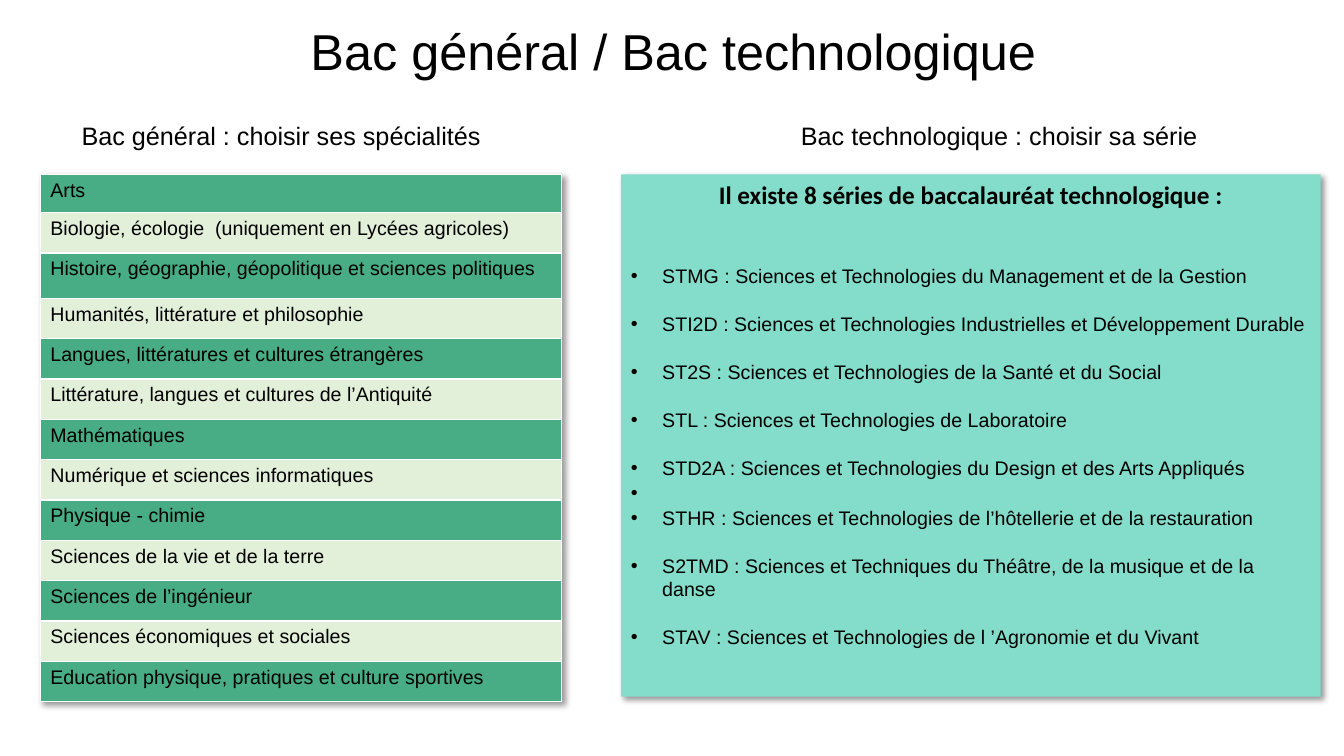
from dataclasses import dataclass

from lxml.etree import SubElement
from pptx import Presentation
from pptx.dml.color import RGBColor as RGB
from pptx.enum.shapes import MSO_SHAPE as SHAPE
from pptx.enum.text import MSO_ANCHOR as ANCHOR, PP_ALIGN as ALIGN
from pptx.oxml.ns import qn
from pptx.util import Inches, Pt


@dataclass(frozen=True)
class Theme:
    text: str = "000000"
    line: str = "FFFFFF"
    band_dark: str = "48AC84"
    band_light: str = "E2F0D9"
    panel: str = "83DDCA"
    font: str = "Arial"
    panel_font: str = "Calibri"
    title: int = 36
    heading: int = 18
    body: int = 14


T = Theme()
W, H = Inches(13.33), Inches(7.5)

SPECIALITES = [
    "Arts",
    "Biologie, écologie  (uniquement en Lycées agricoles)",
    "Histoire, géographie, géopolitique et sciences politiques",
    "Humanités, littérature et philosophie",
    "Langues, littératures et cultures étrangères",
    "Littérature, langues et cultures de l’Antiquité",
    "Mathématiques",
    "Numérique et sciences informatiques",
    "Physique - chimie",
    "Sciences de la vie et de la terre",
    "Sciences de l’ingénieur",
    "Sciences économiques et sociales",
    "Education physique, pratiques et culture sportives",
]
ROW_HEIGHT = 0.4
SPECIAL_ROWS = {0: 0.38, 2: 0.45}

# Text of each bullet and the space before it in points
FIRST, GAP, TIGHT = 39, 17.5, 0.8
SERIES = [
    ("STMG : Sciences et Technologies du Management et de la Gestion", FIRST),
    ("STI2D : Sciences et Technologies Industrielles et Développement Durable", GAP),
    ("ST2S : Sciences et Technologies de la Santé et du Social", GAP),
    ("STL : Sciences et Technologies de Laboratoire", GAP),
    ("STD2A : Sciences et Technologies du Design et des Arts Appliqués", GAP),
    (" ", TIGHT),  # this bullet shows without a label
    ("STHR : Sciences et Technologies de l’hôtellerie et de la restauration", TIGHT),
    ("S2TMD : Sciences et Techniques du Théâtre, de la musique et de la danse", GAP),
    ("STAV : Sciences et Technologies de l ’Agronomie et du Vivant", GAP),
]


def area(left, top, width, height):
    """Turn percentages of the slide into lengths."""
    return [round(size * share / 100) for size, share in
            ((W, left), (H, top), (W, width), (H, height))]


def write(p, text, size, font=T.font, bold=False, align=ALIGN.LEFT):
    p.text = text
    p.alignment = align
    f = p.runs[0].font
    f.name, f.size, f.bold = font, Pt(size), bold
    f.color.rgb = RGB.from_string(T.text)


def add_bullet(p):
    indent = Inches(0.31)
    pPr = p._p.get_or_add_pPr()
    pPr.set("marL", str(indent))
    pPr.set("indent", str(-indent))
    SubElement(pPr, qn("a:buFont"), typeface=T.font)
    SubElement(pPr, qn("a:buChar"), char="•")


def add_shadow(parent):
    effects = SubElement(parent, qn("a:effectLst"))
    shadow = SubElement(effects, qn("a:outerShdw"), blurRad=str(Pt(4)),
                        dist=str(Pt(3)), dir=str(45 * 60000), algn="tl")
    color = SubElement(shadow, qn("a:srgbClr"), val=T.text)
    SubElement(color, qn("a:alpha"), val="40000")


def add_borders(cell):
    tcPr = cell._tc.get_or_add_tcPr()
    for i, side in enumerate(("a:lnL", "a:lnR", "a:lnT", "a:lnB")):
        ln = tcPr.makeelement(qn(side), {"w": str(Pt(1))})
        fill = SubElement(ln, qn("a:solidFill"))
        SubElement(fill, qn("a:srgbClr"), val=T.line)
        tcPr.insert(i, ln)


def add_label(slide, box, text, size, align=ALIGN.LEFT):
    tf = slide.shapes.add_textbox(*area(*box)).text_frame
    tf.word_wrap = True
    write(tf.paragraphs[0], text, size, align=align)


def add_subject_table(slide, box, subjects):
    table = slide.shapes.add_table(len(subjects), 1, *area(*box)).table
    table.first_row = table.horz_banding = False
    tblPr = table._tbl.tblPr
    add_shadow(tblPr)
    tblPr.insert(0, tblPr[-1])  # effects come before the style id
    for i, subject in enumerate(subjects):
        table.rows[i].height = Inches(SPECIAL_ROWS.get(i, ROW_HEIGHT))
        cell = table.cell(i, 0)
        cell.fill.solid()
        cell.fill.fore_color.rgb = RGB.from_string(
            T.band_light if i % 2 else T.band_dark)
        write(cell.text_frame.paragraphs[0], subject, T.body)
        add_borders(cell)


def add_series_panel(slide, box, heading, series):
    sp = slide.shapes.add_shape(SHAPE.RECTANGLE, *area(*box))
    sp.fill.solid()
    sp.fill.fore_color.rgb = RGB.from_string(T.panel)
    sp.line.fill.background()
    add_shadow(sp._element.spPr)
    tf = sp.text_frame
    tf.word_wrap = True
    tf.vertical_anchor = ANCHOR.TOP
    write(tf.paragraphs[0], heading, T.heading, T.panel_font, True, ALIGN.CENTER)
    for text, space in series:
        p = tf.add_paragraph()
        write(p, text, T.body)
        p.space_before = Pt(space)
        add_bullet(p)


def main():
    prs = Presentation()
    prs.slide_width, prs.slide_height = W, H
    slide = prs.slides.add_slide(prs.slide_layouts[6])

    # Title
    add_label(slide, (4.05, 2, 92.12, 9.47), "Bac général / Bac technologique",
              T.title, ALIGN.CENTER)

    # General track
    add_label(slide, (5.33, 15.2, 31.58, 5.33),
              "Bac général : choisir ses spécialités", T.heading)
    add_subject_table(slide, (3, 23.07, 38.78, 69.73), SPECIALITES)

    # Technological track
    add_label(slide, (55.59, 15.2, 37.51, 5.33),
              "Bac technologique : choisir sa série", T.heading, ALIGN.CENTER)
    add_series_panel(slide, (46.21, 23.07, 52.06, 69.07),
                     "Il existe 8 séries de baccalauréat technologique :", SERIES)

    prs.save("out.pptx")


if __name__ == "__main__":
    main()
